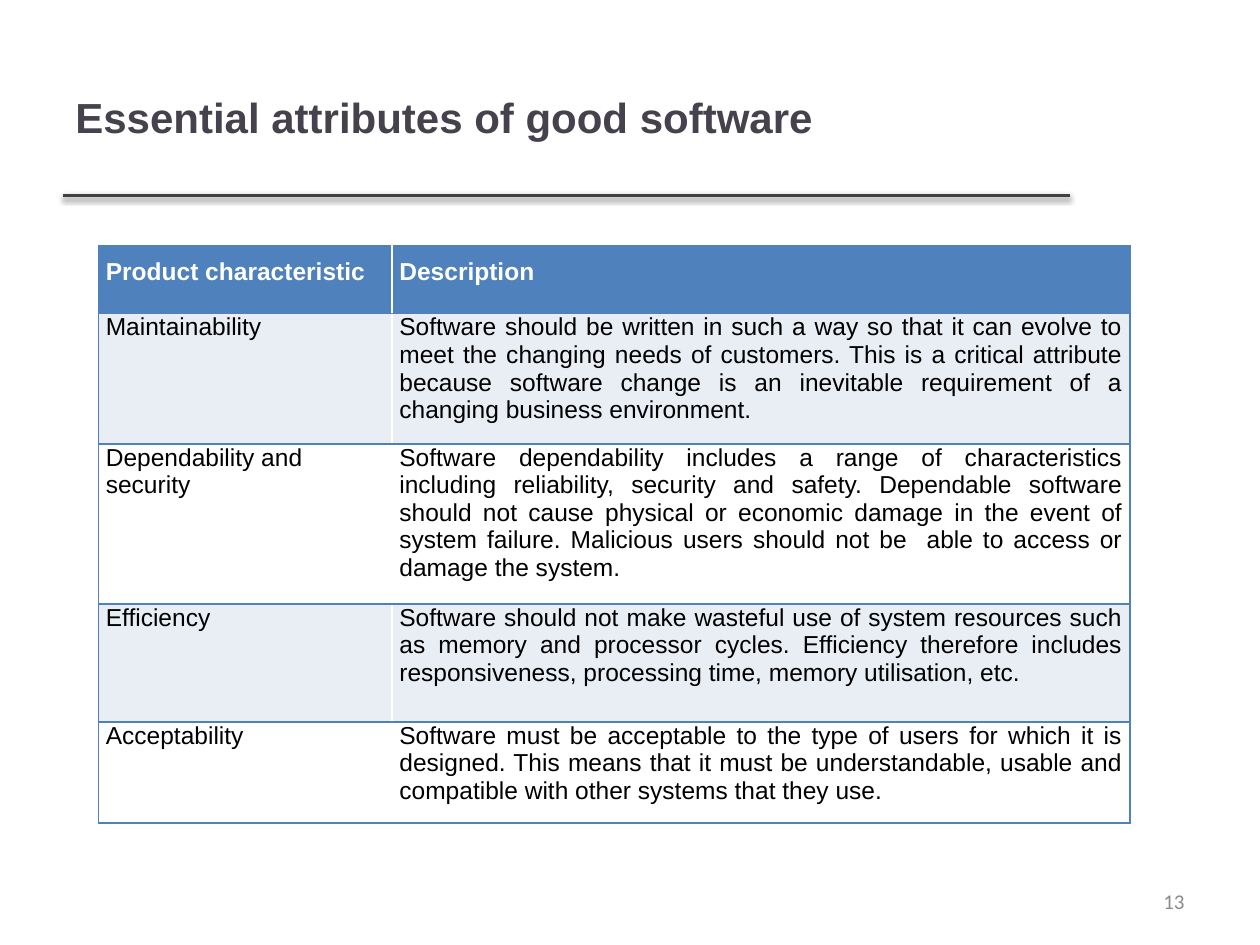
from dataclasses import dataclass

from lxml import etree
from pptx import Presentation
from pptx import util as u
from pptx.dml.color import RGBColor
from pptx.enum import shapes, text
from pptx.oxml import ns

COLORS = {
    "title": "46424D",
    "rule": "404040",
    "shadow": "000000",
    "header": "4F81BD",
    "band": "E9EDF4",
    "white": "FFFFFF",
    "black": "000000",
    "number": "8C8C8C",
}
COLUMN_WIDTHS = (2.33, 5.86)
LEFT_SIDES = ("lnL", "lnT", "lnB")
RIGHT_SIDES = ("lnR", "lnT", "lnB")


@dataclass
class Label:
    content: str
    left: float
    top: float
    width: float
    height: float
    size: int
    font: str
    color: str
    bold: bool = False
    align: text.PP_ALIGN = text.PP_ALIGN.LEFT


@dataclass
class Row:
    name: str
    description: str
    height: float
    fill: str
    color: str = "black"
    top_margin: float = 0
    bold: bool = False
    name_align: text.PP_ALIGN = text.PP_ALIGN.JUSTIFY


LABELS = [
    Label("Essential attributes of good software", 0.5, 0.3, 7.98, 1.25,
          24, "Arial", "title", bold=True),
    Label("13", 7.17, 6.95, 2.33, 0.4, 12, "Calibri", "number",
          align=text.PP_ALIGN.RIGHT),
]

ROWS = [
    Row("Product characteristic", "Description", 0.54, "header", "white", 0.1, True),
    Row("Maintainability",
        "Software should be written in such a way so that it can evolve to meet the "
        "changing needs of customers. This is a critical attribute because software "
        "change is an inevitable requirement of a changing business environment.",
        0.94, "band"),
    Row("Dependability and security",
        "Software dependability includes a range of characteristics including "
        "reliability, security and safety. Dependable software should not cause "
        "physical or economic damage in the event of system failure. Malicious users "
        "should not be  able to access or damage the system.",
        1.14, "white", name_align=text.PP_ALIGN.LEFT),
    Row("Efficiency",
        "Software should not make wasteful use of system resources such as memory and "
        "processor cycles. Efficiency therefore includes responsiveness, processing "
        "time, memory utilisation, etc.",
        0.94, "band"),
    Row("Acceptability",
        "Software must be acceptable to the type of users for which it is designed. "
        "This means that it must be understandable, usable and compatible with other "
        "systems that they use.",
        0.74, "white"),
]


def rgb(name: str) -> RGBColor:
    return RGBColor.from_string(COLORS[name])


def style_paragraph(paragraph, size: int, font: str, color: str, bold: bool,
                    align: text.PP_ALIGN) -> None:
    paragraph.alignment = align
    paragraph.font.size = u.Pt(size)
    paragraph.font.name = font
    paragraph.font.bold = bold
    paragraph.font.color.rgb = rgb(color)


def add_label(slide, label: Label) -> None:
    shape = slide.shapes.add_textbox(u.Inches(label.left), u.Inches(label.top),
                                     u.Inches(label.width), u.Inches(label.height))
    frame = shape.text_frame
    frame.word_wrap = True
    frame.vertical_anchor = text.MSO_ANCHOR.MIDDLE
    frame.text = label.content
    style_paragraph(frame.paragraphs[0], label.size, label.font, label.color,
                    label.bold, label.align)


def add_title_rule(slide) -> None:
    rule = slide.shapes.add_connector(shapes.MSO_CONNECTOR.STRAIGHT, u.Inches(0.5),
                                      u.Inches(1.55), u.Inches(8.49), u.Inches(1.55))
    rule.line.color.rgb = rgb("rule")
    rule.line.width = u.Pt(2)
    effects = etree.SubElement(rule.element.spPr, ns.qn("a:effectLst"))
    shadow = etree.SubElement(effects, ns.qn("a:outerShdw"), blurRad=str(u.Pt(3.1)),
                              dist=str(u.Pt(1.6)), dir="5400000", rotWithShape="0")
    color = etree.SubElement(shadow, ns.qn("a:srgbClr"), val=COLORS["shadow"])
    etree.SubElement(color, ns.qn("a:alpha"), val="38000")


def add_borders(cell, sides: tuple[str, ...]) -> None:
    properties = cell._tc.get_or_add_tcPr()
    for index, side in enumerate(sides):
        border = etree.Element(ns.qn(f"a:{side}"), w=str(u.Pt(1)))
        fill = etree.SubElement(border, ns.qn("a:solidFill"))
        etree.SubElement(fill, ns.qn("a:srgbClr"), val=COLORS["header"])
        properties.insert(index, border)


def fill_cell(cell, content: str, row: Row, align: text.PP_ALIGN,
              sides: tuple[str, ...]) -> None:
    cell.text = content
    cell.margin_left = cell.margin_right = u.Inches(0.06)
    cell.margin_top = u.Inches(row.top_margin)
    cell.margin_bottom = u.Inches(0.1)
    cell.fill.solid()
    cell.fill.fore_color.rgb = rgb(row.fill)
    style_paragraph(cell.text_frame.paragraphs[0], 14, "Arial", row.color, row.bold, align)
    add_borders(cell, sides)


def add_attribute_table(slide) -> None:
    frame = slide.shapes.add_table(len(ROWS), len(COLUMN_WIDTHS), u.Inches(0.78),
                                   u.Inches(1.95), u.Inches(sum(COLUMN_WIDTHS)),
                                   u.Inches(sum(row.height for row in ROWS)))
    table = frame.table
    for column, width in zip(table.columns, COLUMN_WIDTHS):
        column.width = u.Inches(width)
    for index, row in enumerate(ROWS):
        table.rows[index].height = u.Inches(row.height)
        fill_cell(table.cell(index, 0), row.name, row, row.name_align, LEFT_SIDES)
        fill_cell(table.cell(index, 1), row.description, row,
                  text.PP_ALIGN.JUSTIFY, RIGHT_SIDES)


def main() -> None:
    presentation = Presentation()
    presentation.slide_width = u.Inches(10)
    presentation.slide_height = u.Inches(7.5)
    slide = presentation.slides.add_slide(presentation.slide_layouts[6])
    add_title_rule(slide)
    for label in LABELS:
        add_label(slide, label)
    add_attribute_table(slide)
    presentation.save("out.pptx")


if __name__ == "__main__":
    main()
